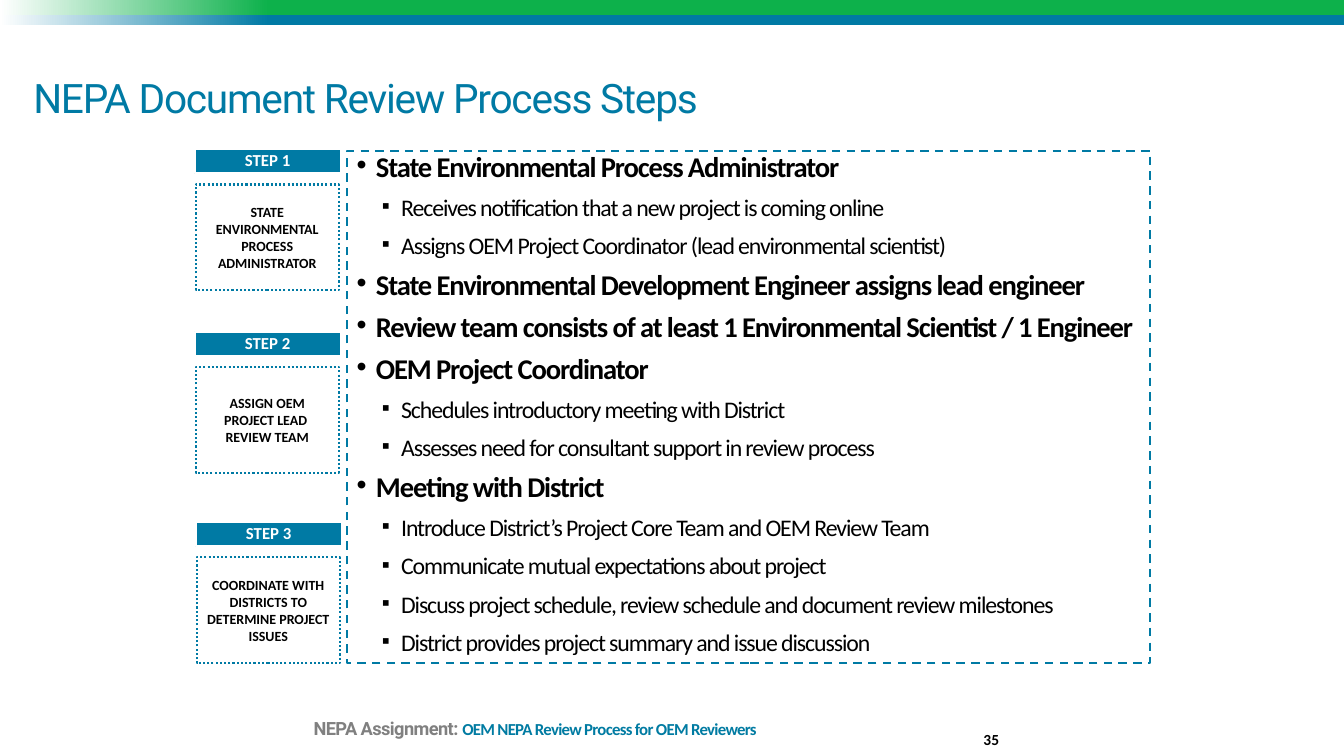
"""Build the slide on the steps of the NEPA document review process."""
from copy import deepcopy

from lxml import etree
from pptx import Presentation
from pptx import util as u
from pptx.dml.color import RGBColor
from pptx.enum import dml, shapes, text
from pptx.oxml.ns import qn

SCALE = 9144
COLORS = {"blue": "007AA4", "footer": "007BA2", "green": "0DB14B",
          "gray": "808080", "black": "000000", "white": "FFFFFF"}
LEFT, CENTER, RIGHT = text.PP_ALIGN.LEFT, text.PP_ALIGN.CENTER, text.PP_ALIGN.RIGHT
MIDDLE, BOTTOM = text.MSO_ANCHOR.MIDDLE, text.MSO_ANCHOR.BOTTOM
STEPS = [
    (193, 148, "STEP 1", "STATE ENVIRONMENTAL PROCESS ADMINISTRATOR"),
    (193, 329, "STEP 2", "ASSIGN OEM\nPROJECT LEAD \nREVIEW TEAM"),
    (194, 518, "STEP 3", "COORDINATE WITH DISTRICTS TO DETERMINE PROJECT ISSUES"),
]
DETAILS = [
    ("State Environmental Process Administrator", [
        "Receives notification that a new project is coming online",
        "Assigns OEM Project Coordinator (lead environmental scientist)"]),
    ("State Environmental Development Engineer assigns lead engineer", []),
    ("Review team consists of at least 1 Environmental Scientist / 1 Engineer", []),
    ("OEM Project Coordinator", [
        "Schedules introductory meeting with District",
        "Assesses need for consultant support in review process"]),
    ("Meeting with District", [
        "Introduce District’s Project Core Team and OEM Review Team",
        "Communicate mutual expectations about project",
        "Discuss project schedule, review schedule and document review milestones",
        "District provides project summary and issue discussion"]),
]


def px(value):
    return u.Emu(value * SCALE)


def rgb(name):
    return RGBColor.from_string(COLORS[name])


def place(box, left, top, width, height):
    box.left, box.top, box.width, box.height = map(px, (left, top, width, height))


def set_frame(box, anchor, side=0, edge=0):
    frame = box.text_frame
    frame.word_wrap = True
    frame.auto_size = text.MSO_AUTO_SIZE.NONE
    frame.vertical_anchor = anchor
    frame.margin_left = frame.margin_right = px(side)
    frame.margin_top = frame.margin_bottom = px(edge)
    return frame


def format_span(span, size, color="black", font="Calibri", bold=False, spacing=0):
    span.font.size = u.Pt(size)
    span.font.name = font
    span.font.bold = bold
    span.font.color.rgb = rgb(color)
    if spacing:
        span.font._element.set("spc", str(spacing))


def write(para, words, align=LEFT, line=1.0, after=0, **style):
    para.text = words
    para.alignment = align
    para.line_spacing = line
    para.space_after = u.Pt(after)
    for span in para.runs:
        format_span(span, **style)
    for line_break in para._p.findall(qn("a:br")):
        line_break.append(deepcopy(para.runs[0].font._element))


def add_bullet(para, mark, indent, size):
    properties = para._p.get_or_add_pPr()
    properties.set("marL", str(px(indent)))
    properties.set("indent", str(px(-19)))
    etree.SubElement(properties, qn("a:buSzPct"), val=str(size * 1000))
    etree.SubElement(properties, qn("a:buFont"), typeface="Arial")
    etree.SubElement(properties, qn("a:buChar"), char=mark)


def add_box(page, left, top, width, height, fill=None, line=None, dash=None):
    box = page.shapes.add_shape(shapes.MSO_SHAPE.RECTANGLE,
                                *map(px, (left, top, width, height)))
    box.shadow.inherit = False
    if fill:
        box.fill.solid()
        box.fill.fore_color.rgb = rgb(fill)
    else:
        box.fill.background()
    if line:
        box.line.color.rgb = rgb(line)
        box.line.width = u.Pt(1.5)
        box.line.dash_style = dash
    else:
        box.line.fill.background()
    return box


def add_band(page, top, height, color):
    band = add_box(page, 0, top, 1333, height)
    band.fill.gradient()
    band.fill.gradient_angle = 0
    for stop, position, name in zip(band.fill.gradient_stops, (0, 0.2), ("white", color)):
        stop.position = position
        stop.color.rgb = rgb(name)


def add_label(page, left, top, width, height, words, **style):
    label = page.shapes.add_textbox(*map(px, (left, top, width, height)))
    para = set_frame(label, BOTTOM).paragraphs[0]
    write(para, words, **style)
    return para


def add_step(page, left, top, heading, task):
    header = add_box(page, left, top, 145, 24, "blue", "white")
    write(set_frame(header, MIDDLE, 5, 5).paragraphs[0], heading, align=CENTER,
          line=0.9, size=12, color="white", bold=True)
    body = add_box(page, left + 1, top + 35, 142, 105, line="blue",
                   dash=dml.MSO_LINE.ROUND_DOT)
    write(set_frame(body, MIDDLE, 3, 5).paragraphs[0], task, align=CENTER,
          size=10, bold=True)


def add_details(page):
    panel = add_box(page, 344, 150, 797, 508, line="blue", dash=dml.MSO_LINE.DASH)
    frame = set_frame(panel, MIDDLE, 10, 5)
    rows = [(level, words) for topic, points in DETAILS
            for level, words in [(0, topic)] + [(1, point) for point in points]]
    for index, (level, words) in enumerate(rows):
        para = frame.add_paragraph() if index else frame.paragraphs[0]
        write(para, words, line=0.65, after=14, size=17 if level else 20.4,
              bold=not level, spacing=-80)
        para.level = level
        add_bullet(para, *(("▪", 44, 95) if level else ("•", 19, 100)))


def main():
    deck = Presentation()
    deck.slide_width, deck.slide_height = px(1333), px(750)
    page = deck.slides.add_slide(deck.slide_layouts[5])
    add_band(page, 0, 15, "green")
    add_band(page, 15, 10, "blue")
    title = page.shapes.title
    place(title, 33, 30, 1200, 90)
    write(set_frame(title, BOTTOM).paragraphs[0], "NEPA Document Review Process Steps",
          line=0.8, size=29, color="blue", font="Roboto", spacing=-90)
    for step in STEPS:
        add_step(page, *step)
    add_details(page)
    footer = add_label(page, 311, 686, 721, 47, "NEPA Assignment: ", line=0.8, after=12,
                       size=13, color="gray", font="Roboto", bold=True, spacing=-40)
    span = footer.add_run()
    span.text = "OEM NEPA Review Process for OEM Reviewers"
    format_span(span, 12, "footer", bold=True, spacing=-50)
    add_label(page, 933, 703, 58, 40, "35", align=RIGHT, size=11, bold=True)
    deck.save("out.pptx")


if __name__ == "__main__":
    main()
